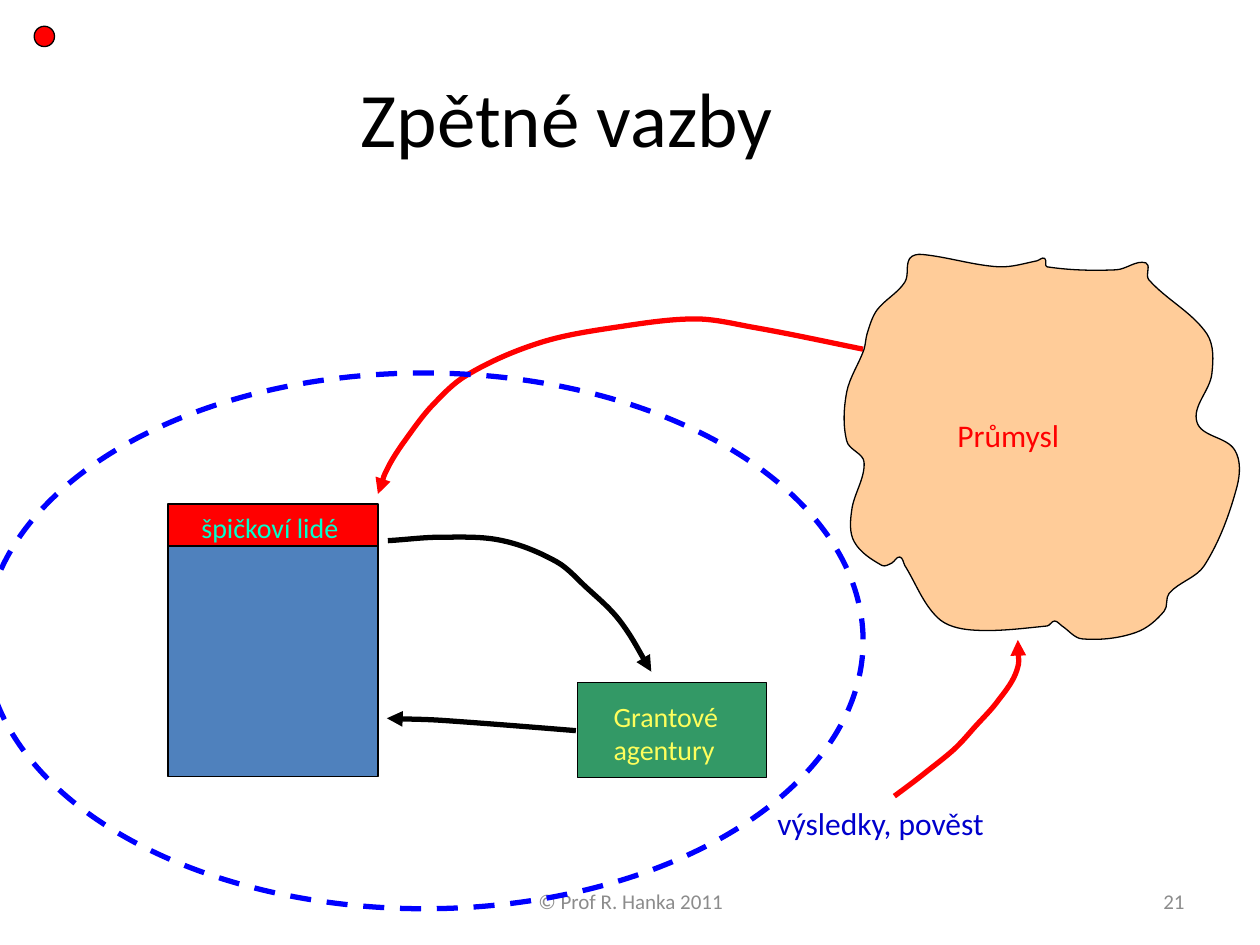
from math import hypot

from lxml.etree import SubElement
from pptx import Presentation
from pptx.dml.color import RGBColor
from pptx.enum.dml import MSO_LINE
from pptx.enum.shapes import MSO_SHAPE as SHAPE
from pptx.enum.text import MSO_ANCHOR as ANCHOR, PP_ALIGN as ALIGN
from pptx.oxml.ns import qn
from pptx.util import Cm, Pt

BLACK = RGBColor(0x00, 0x00, 0x00)
GREY = RGBColor(0x8C, 0x8C, 0x8C)
RED = RGBColor(0xFF, 0x00, 0x00)
BLUE = RGBColor(0x00, 0x00, 0xFF)
NAVY = RGBColor(0x00, 0x00, 0xCC)
STEEL = RGBColor(0x4F, 0x81, 0xBD)
GREEN = RGBColor(0x33, 0x99, 0x66)
YELLOW = RGBColor(0xFE, 0xFE, 0x5C)
AQUA = RGBColor(0x00, 0xFF, 0xCC)
PEACH = RGBColor(0xFF, 0xCC, 0x99)

THIN, THICK = 0.75, 3  # line widths in points

# Institution column: a band of top people above the other staff (cm)
COLUMN_X, COLUMN_Y, COLUMN_W = 3.39, 10.16, 4.23
PEOPLE_H, STAFF_H = 0.85, 4.65

# Footer row (cm)
FOOTER_Y, FOOTER_H = 17.65, 1.02

# Feedback arrows: (colour, waypoints in cm from tail to head)
ARROWS = {
    "people to agencies": (BLACK, [
        (7.82, 10.9), (8.9, 10.83), (10.13, 10.9), (11.23, 11.33),
        (11.84, 11.86), (12.5, 12.52), (13.13, 13.54)]),
    "agencies to people": (BLACK, [(11.61, 14.73), (9.02, 14.53), (7.8, 14.48)]),
    "results to industry": (RED, [
        (18.03, 16.05), (18.6, 15.62), (19.23, 15.11), (19.63, 14.68),
        (20.14, 14.1), (20.5, 13.51), (20.52, 12.9)]),
    "industry to people": (RED, [
        (17.4, 7.04), (15.19, 6.6), (14.02, 6.43), (12.4, 6.6), (10.82, 6.93),
        (9.4, 7.57), (8.69, 8.2), (8.1, 8.97), (7.8, 9.47), (7.62, 9.96)]),
}

# Industry cloud: waypoints in cm, clockwise side by side
CLOUD_TOP = [(18.24, 5.69), (18.34, 5.21), (18.59, 5.13), (20.14, 5.38), (20.9, 5.26),
             (21.06, 5.21), (21.11, 5.38), (22.5, 5.44), (23.1, 5.3), (23.16, 5.64)]
CLOUD_RIGHT = [(24.33, 6.73), (24.43, 7.54), (24.13, 8.51), (24.89, 9.07),
               (24.94, 9.8), (24.28, 11.4), (23.57, 11.96), (23.47, 12.32)]
CLOUD_BOTTOM = [(22.9, 12.75), (21.82, 12.88), (21.41, 12.62), (21.26, 12.52),
                (21.11, 12.62), (19.58, 12.7), (18.9, 12.45), (18.24, 11.4),
                (18.14, 11.23), (17.98, 11.35), (17.78, 11.4), (17.22, 10.92)]
CLOUD_LEFT = [(17.17, 10.29), (17.42, 9.32), (17.07, 8.89), (17.07, 7.9),
              (17.42, 7.04), (17.48, 6.73), (17.68, 6.25)]


def write(tf, text, size, color, align=ALIGN.LEFT, anchor=ANCHOR.TOP, wrap=False):
    tf.word_wrap, tf.vertical_anchor = wrap, anchor
    for i, line in enumerate(text.split("\n")):
        p = tf.paragraphs[0] if i == 0 else tf.add_paragraph()
        p.alignment = align
        r = p.add_run()
        r.text = line
        r.font.name, r.font.size, r.font.color.rgb = "Calibri", Pt(size), color


def add_label(s, text, x, y, w, h, **fmt):
    box = s.shapes.add_textbox(Cm(x), Cm(y), Cm(w), Cm(h))
    write(box.text_frame, text, **fmt)


def style(sp, fill=None, line=BLACK, width=THIN):
    sp.shadow.inherit = False
    if fill is None:
        sp.fill.background()
    else:
        sp.fill.solid()
        sp.fill.fore_color.rgb = fill
    sp.line.color.rgb, sp.line.width = line, Pt(width)
    return sp


def add_preset(s, kind, x, y, w, h, **look):
    return style(s.shapes.add_shape(kind, Cm(x), Cm(y), Cm(w), Cm(h)), **look)


def smooth_segments(points, closed):
    """Yield (handle, handle, end) for a smooth curve through all points.

    The handles at a point are parallel to the chord between its neighbours,
    and each is a third as long as the segment it shapes.
    """
    if closed:
        padded = [points[-1], *points, *points[:2]]
    else:
        padded = [points[0], *points, points[-1]]
    for before, start, end, after in zip(padded, padded[1:], padded[2:], padded[3:]):
        reach = hypot(end[0] - start[0], end[1] - start[1]) / 3
        yield (shift(start, before, end, reach), shift(end, after, start, reach), end)


def shift(point, tail, head, distance):
    """Move a point by a distance in the direction from tail to head."""
    dx, dy = head[0] - tail[0], head[1] - tail[1]
    ratio = distance / (hypot(dx, dy) or 1)
    return point[0] + dx * ratio, point[1] + dy * ratio


def add_curve(s, points, closed=False, **look):
    builder = s.shapes.build_freeform(*points[0], scale=Cm(1))
    # Build in hundredths of a centimetre, since local units are whole numbers
    hundredths = [[(x * 100, y * 100) for x, y in segment]
                  for segment in smooth_segments(points, closed)]
    start = [c * 100 for c in points[0]]
    builder = s.shapes.build_freeform(*start, scale=Cm(0.01))
    for segment in hundredths:
        builder.add_line_segments(segment, close=closed and segment is hundredths[-1])
    sp = style(builder.convert_to_shape(), **look)
    # Turn every three line steps into one Bezier step
    steps = list(sp._element.iter(qn("a:lnTo")))
    for i in range(0, len(steps), 3):
        bezier = SubElement(steps[i].getparent(), qn("a:cubicBezTo"))
        steps[i].addprevious(bezier)
        for step in steps[i:i + 3]:
            bezier.append(step[0])
            step.getparent().remove(step)
    return sp


def add_arrow(s, points, color):
    sp = add_curve(s, points, line=color, width=THICK)
    SubElement(sp.line._get_or_add_ln(), qn("a:tailEnd"), type="triangle")


def add_title(s, text):
    title = s.shapes.title
    title.left, title.top, title.width, title.height = Cm(0), Cm(0.76), Cm(22.86), Cm(3.18)
    write(title.text_frame, text, size=44, color=BLACK, align=ALIGN.CENTER,
          anchor=ANCHOR.MIDDLE, wrap=True)


def add_footer(s, text, x, w, align):
    add_label(s, text, x, FOOTER_Y, w, FOOTER_H, size=12, color=GREY,
              align=align, anchor=ANCHOR.MIDDLE, wrap=True)


def add_institution(s):
    y = COLUMN_Y
    for height, fill in ((PEOPLE_H, RED), (STAFF_H, STEEL)):
        add_preset(s, SHAPE.RECTANGLE, COLUMN_X, y, COLUMN_W, height, fill=fill)
        y += height
    add_label(s, "špičkoví lidé", 3.81, COLUMN_Y, 3.43, 0.94, size=16, color=AQUA)


def add_industry(s):
    outline = CLOUD_TOP + CLOUD_RIGHT + CLOUD_BOTTOM + CLOUD_LEFT
    add_curve(s, outline, closed=True, fill=PEACH)
    add_label(s, "Průmysl", 19.05, 8.26, 3.33, 1.27, size=18, color=RED)


def main():
    prs = Presentation()
    prs.slide_width, prs.slide_height = Cm(25.4), Cm(19.05)
    s = prs.slides.add_slide(prs.slide_layouts[5])

    # Footer and title
    add_footer(s, "© Prof R. Hanka 2011", 8.69, 8.05, ALIGN.CENTER)
    add_footer(s, "21", 18.21, 5.92, ALIGN.RIGHT)
    add_title(s, "Zpětné vazby")

    # Grant agencies, results and the arrows between the parties
    add_preset(s, SHAPE.RECTANGLE, 11.64, 13.76, 3.81, 1.91, fill=GREEN)
    add_label(s, "Grantové\nagentury", 12.12, 13.97, 2.62, 1.63, size=16, color=YELLOW)
    add_label(s, "výsledky, pověst", 15.42, 16.08, 6.2, 1.27, size=18, color=NAVY)
    for color, waypoints in ARROWS.values():
        add_arrow(s, waypoints, color)

    add_institution(s)
    add_industry(s)

    # Academic boundary and corner marker
    boundary = add_preset(s, SHAPE.OVAL, -0.3, 7.52, 17.7, 10.8, line=BLUE, width=THICK)
    boundary.line.dash_style = MSO_LINE.DASH
    add_preset(s, SHAPE.OVAL, 0.69, 0.53, 0.41, 0.41, fill=RED)

    prs.save("out.pptx")


if __name__ == "__main__":
    main()
